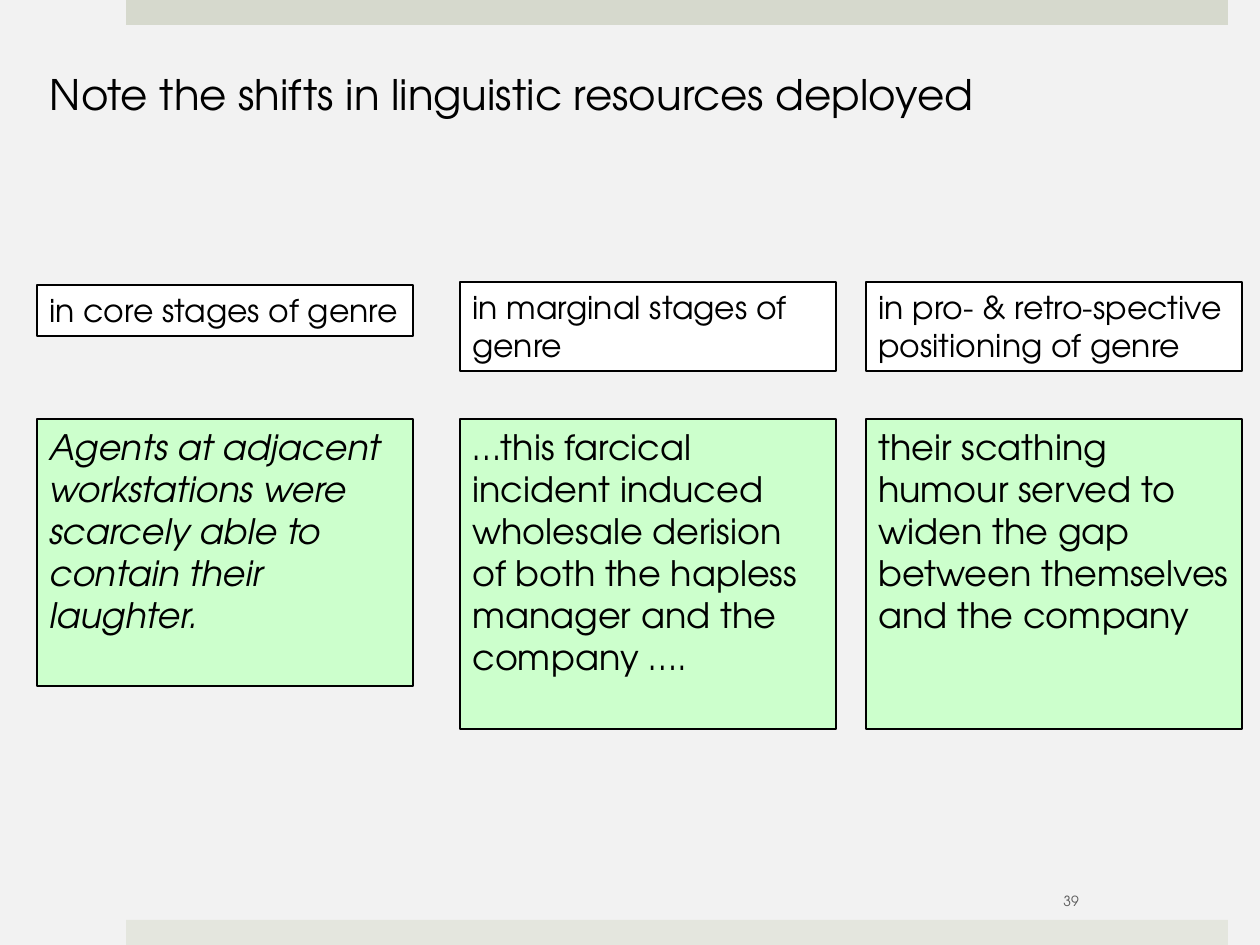
from dataclasses import dataclass

import pptx
import pptx.dml.color
import pptx.enum.shapes
import pptx.enum.text
import pptx.util

EMU_PER_PX = 914400 / 126
ANCHOR = pptx.enum.text.MSO_ANCHOR
ALIGN = pptx.enum.text.PP_ALIGN


@dataclass(frozen=True)
class Theme:
    font: str = "TeX Gyre Adventor"
    background: str = "F2F2F2"
    top_band: str = "D6D9CD"
    bottom_band: str = "E4E6DE"
    heading_fill: str = "FFFFFF"
    example_fill: str = "CCFFCC"
    ink: str = "000000"
    number_ink: str = "595959"
    title_size: int = 24
    heading_size: int = 18
    example_size: int = 20
    number_size: int = 8
    outline: float = 0.75


@dataclass(frozen=True)
class Box:
    left: int
    top: int
    width: int
    height: int

    def emu(self) -> list[int]:
        lengths = (self.left, self.top, self.width, self.height)
        return [px(length) for length in lengths]


@dataclass(frozen=True)
class Stage:
    left: int
    heading: str
    heading_top: int
    heading_height: int
    example: str
    example_height: int
    italic: bool = False


THEME = Theme()
COLUMN_WIDTH = 376
EXAMPLE_TOP = 419

STAGES = [
    Stage(37, "in core stages of genre", 285, 51,
          "Agents at adjacent workstations were scarcely able to contain "
          "their laughter.", 267, italic=True),
    Stage(460, "in marginal stages of genre", 282, 89,
          "…this farcical incident induced wholesale derision of both the "
          "hapless manager and the company ….", 310),
    Stage(866, "in pro- & retro-spective positioning of genre", 282, 89,
          "their scathing humour served to widen the gap between themselves "
          "and the company", 310),
]


def px(length: int) -> pptx.util.Emu:
    return pptx.util.Emu(round(length * EMU_PER_PX))


def rgb(value: str) -> pptx.dml.color.RGBColor:
    return pptx.dml.color.RGBColor.from_string(value)


def write(shape, text: str, size: int, color: str = THEME.ink,
          italic: bool = False, align=ALIGN.LEFT, anchor=ANCHOR.TOP) -> None:
    frame = shape.text_frame
    frame.word_wrap = True
    frame.auto_size = pptx.enum.text.MSO_AUTO_SIZE.NONE
    frame.vertical_anchor = anchor
    paragraph = frame.paragraphs[0]
    paragraph.alignment = align
    run = paragraph.add_run()
    run.text = text
    run.font.name = THEME.font
    run.font.size = pptx.util.Pt(size)
    run.font.italic = italic
    run.font.color.rgb = rgb(color)


def draw_rectangle(slide, box: Box, fill: str, outlined: bool = False):
    rectangle = slide.shapes.add_shape(
        pptx.enum.shapes.MSO_SHAPE.RECTANGLE, *box.emu())
    rectangle.shadow.inherit = False
    rectangle.fill.solid()
    rectangle.fill.fore_color.rgb = rgb(fill)
    if outlined:
        rectangle.line.color.rgb = rgb(THEME.ink)
        rectangle.line.width = pptx.util.Pt(THEME.outline)
    else:
        rectangle.line.fill.background()
    return rectangle


def draw_stage(slide, stage: Stage) -> None:
    example = draw_rectangle(
        slide, Box(stage.left, EXAMPLE_TOP, COLUMN_WIDTH, stage.example_height),
        THEME.example_fill, outlined=True)
    write(example, stage.example, THEME.example_size, italic=stage.italic)
    heading = draw_rectangle(
        slide,
        Box(stage.left, stage.heading_top, COLUMN_WIDTH, stage.heading_height),
        THEME.heading_fill, outlined=True)
    write(heading, stage.heading, THEME.heading_size)


def main() -> None:
    presentation = pptx.Presentation()
    presentation.slide_width, presentation.slide_height = px(1260), px(945)
    slide = presentation.slides.add_slide(presentation.slide_layouts[5])
    slide.background.fill.solid()
    slide.background.fill.fore_color.rgb = rgb(THEME.background)

    # Bands at the top and bottom edges
    draw_rectangle(slide, Box(126, 0, 1102, 25), THEME.top_band)
    draw_rectangle(slide, Box(126, 920, 1102, 25), THEME.bottom_band)

    # Slide number
    number = slide.shapes.add_textbox(*Box(924, 876, 294, 50).emu())
    write(number, "39", THEME.number_size, THEME.number_ink,
          align=ALIGN.CENTER, anchor=ANCHOR.MIDDLE)

    # Title
    title = slide.shapes.title
    title.left, title.top, title.width, title.height = Box(37, 62, 1205, 78).emu()
    write(title, "Note the shifts in linguistic resources deployed",
          THEME.title_size)

    # Headings with their example texts
    for stage in STAGES:
        draw_stage(slide, stage)

    presentation.save("out.pptx")


if __name__ == "__main__":
    main()
